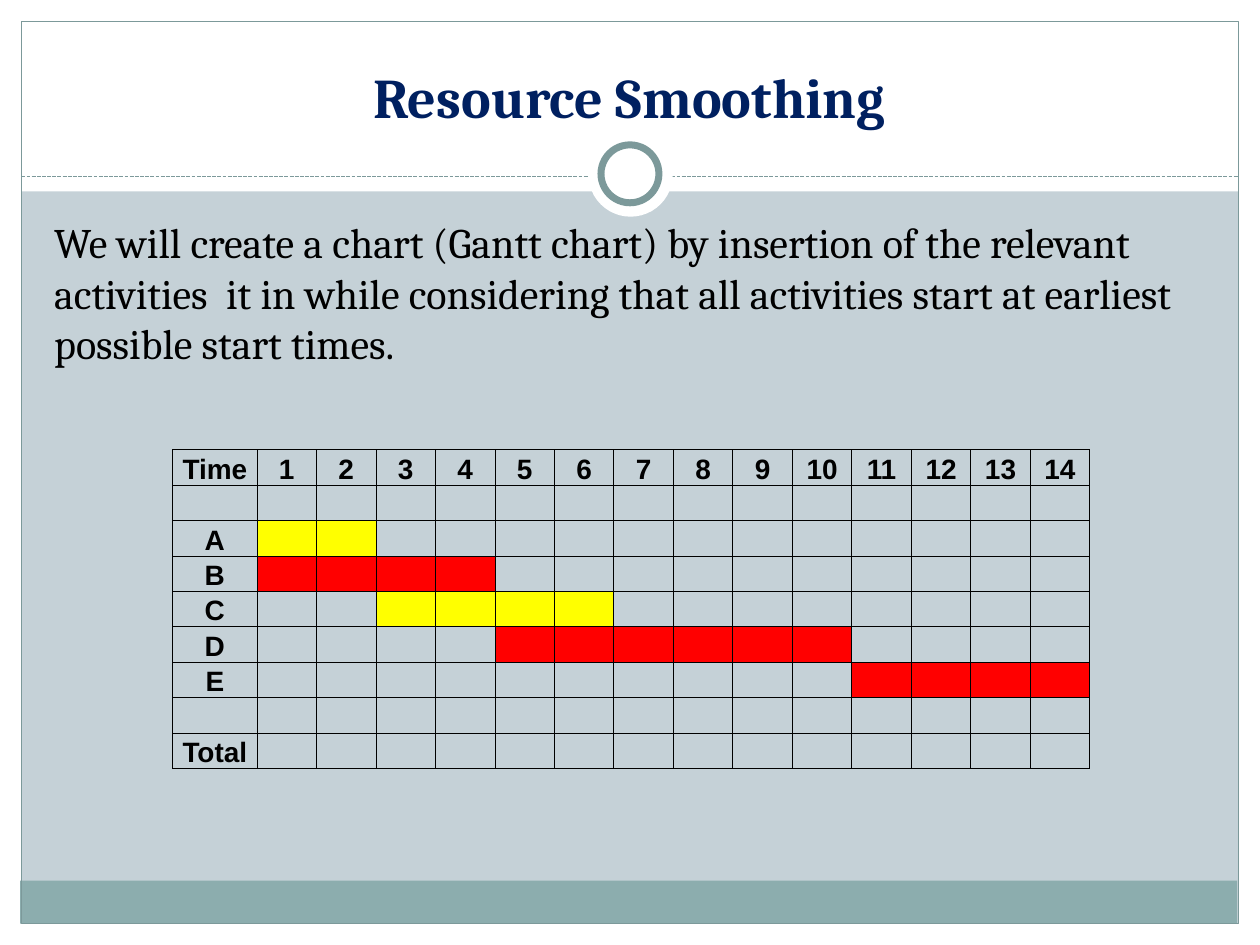
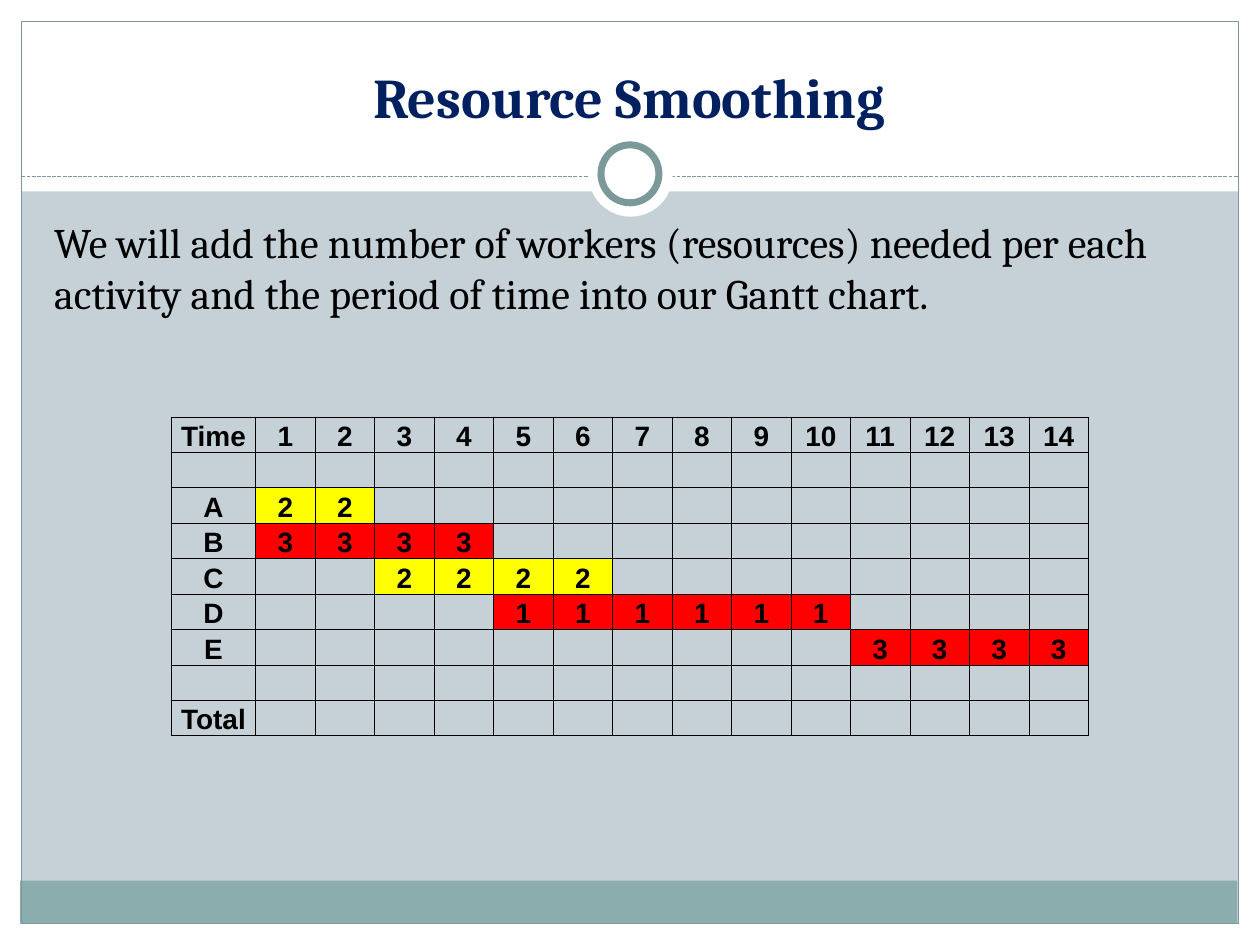
from dataclasses import dataclass

from lxml.etree import SubElement
from pptx import Presentation
from pptx.dml.color import RGBColor
from pptx.enum.dml import MSO_LINE_DASH_STYLE as Dash
from pptx.enum.shapes import MSO_CONNECTOR, MSO_SHAPE
from pptx.enum.text import MSO_ANCHOR, MSO_AUTO_SIZE, PP_ALIGN
from pptx.oxml.ns import qn
from pptx.util import Inches, Pt

WHITE, BLACK, NAVY = "FFFFFF", "000000", "002060"
BACKDROP, BAND, TRIM = "C5D1D7", "8CADAE", "7C999A"
YELLOW, RED = "FFFF00", "FF0000"
HEADING_FONT, TABLE_FONT = "Cambria", "Arial"
PERIODS = 14
TABLE_WIDTH, TABLE_HEIGHT = 7.28, 2.95
LABEL_WIDTH, EDGE_HEIGHT = 0.67, 0.21


@dataclass(frozen=True)
class Decoration:
    kind: MSO_SHAPE
    left: float
    top: float
    width: float
    height: float
    fill: str | None = WHITE
    line_width: float = 0


@dataclass(frozen=True)
class Activity:
    name: str
    start: int
    end: int
    workers: int
    color: str


@dataclass(frozen=True)
class GanttSlide:
    text: str
    table_left: float
    table_top: float
    show_workers: bool


FRAME = [
    Decoration(MSO_SHAPE.RECTANGLE, 0, 7.33, 10, 0.17),
    Decoration(MSO_SHAPE.RECTANGLE, 0, 0, 10, 1.52),
    Decoration(MSO_SHAPE.RECTANGLE, 0, 0, 0.17, 7.5),
    Decoration(MSO_SHAPE.RECTANGLE, 9.83, 0, 0.17, 7.5),
    Decoration(MSO_SHAPE.RECTANGLE, 0.16, 6.99, 9.66, 0.34, BAND),
    Decoration(MSO_SHAPE.RECTANGLE, 0.17, 0.17, 9.66, 7.16, None, 0.75),
]
RING = [
    Decoration(MSO_SHAPE.OVAL, 4.67, 1.05, 0.67, 0.67),
    Decoration(MSO_SHAPE.OVAL, 4.77, 1.15, 0.46, 0.46, WHITE, 4),
]
ACTIVITIES = [
    Activity("A", 1, 2, 2, YELLOW),
    Activity("B", 1, 4, 3, RED),
    Activity("C", 3, 6, 2, YELLOW),
    Activity("D", 5, 10, 1, RED),
    Activity("E", 11, 14, 3, RED),
]
SLIDES = [
    GanttSlide(
        "We will create a chart (Gantt chart) by insertion of the relevant activities  it in "
        "while considering that all activities start at earliest possible start times.",
        1.37, 3.36, False),
    GanttSlide(
        "We will add the number of workers (resources) needed per each activity and the "
        "period of time into our Gantt chart.",
        1.36, 3.1, True),
]


def paint(color_format, color: str) -> None:
    color_format.rgb = RGBColor.from_string(color)


def fill_solid(target, color: str) -> None:
    target.fill.solid()
    paint(target.fill.fore_color, color)


def place(shape, left: float, top: float, width: float, height: float) -> None:
    shape.left, shape.top = Inches(left), Inches(top)
    shape.width, shape.height = Inches(width), Inches(height)


def style_runs(para, font: str, size: int, color: str, bold: bool = False) -> None:
    for span in para.runs:
        span.font.name, span.font.size, span.font.bold = font, Pt(size), bold
        paint(span.font.color, color)


def draw_decoration(page, item: Decoration):
    shape = page.shapes.add_shape(item.kind, Inches(item.left), Inches(item.top),
                                  Inches(item.width), Inches(item.height))
    shape.shadow.inherit = False
    if item.fill:
        fill_solid(shape, item.fill)
    else:
        shape.fill.background()
    if item.line_width:
        paint(shape.line.color, TRIM)
        shape.line.width = Pt(item.line_width)
    else:
        shape.line.fill.background()
    return shape


def draw_divider(page):
    line = page.shapes.add_connector(MSO_CONNECTOR.STRAIGHT, Inches(0.17), Inches(1.4),
                                     Inches(9.83), Inches(1.4))
    paint(line.line.color, TRIM)
    line.line.width = Pt(0.75)
    line.line.dash_style = Dash.SQUARE_DOT
    SubElement(line.element.spPr, qn("a:effectLst"))
    return line


def decorate_layout(layout, page) -> None:
    """Draw the shared frame with the page's shape tools, then hand it to the layout."""
    fill_solid(layout.background, BACKDROP)
    shapes = [draw_decoration(page, item) for item in FRAME]
    shapes.append(draw_divider(page))
    shapes += [draw_decoration(page, item) for item in RING]
    for shape in shapes:
        layout.shapes.element.append(shape.element)


def write_title(page) -> None:
    title = page.shapes.title
    place(title, 0.33, 0.25, 9.33, 0.83)
    frame = title.text_frame
    frame.text = "Resource Smoothing"
    frame.auto_size = MSO_AUTO_SIZE.NONE
    frame.vertical_anchor = MSO_ANCHOR.BOTTOM
    frame.paragraphs[0].alignment = PP_ALIGN.CENTER
    style_runs(frame.paragraphs[0], HEADING_FONT, 32, NAVY, True)


def write_body(page, text: str) -> None:
    body = page.placeholders[1]
    place(body, 0.33, 1.67, 9.36, 2.32)
    frame = body.text_frame
    frame.text = text
    frame.auto_size = MSO_AUTO_SIZE.NONE
    para = frame.paragraphs[0]
    style_runs(para, HEADING_FONT, 24, BLACK)
    properties = para._p.get_or_add_pPr()
    properties.set("marL", "0")
    properties.set("indent", "0")
    SubElement(properties, qn("a:buNone"))


def set_borders(cell, visible: str) -> None:
    properties = cell._tc.get_or_add_tcPr()
    for side in "LRTB":
        line = SubElement(properties, qn(f"a:ln{side}"), w=str(Pt(0.5)))
        if side in visible:
            fill = SubElement(line, qn("a:solidFill"))
            SubElement(fill, qn("a:srgbClr"), val=BLACK)
        else:
            SubElement(line, qn("a:noFill"))


def write_cell(cell, text: str, color: str | None, borders: str) -> None:
    set_borders(cell, borders)
    if color:
        fill_solid(cell, color)
    else:
        cell.fill.background()
    cell.margin_left = cell.margin_right = cell.margin_top = Inches(0.01)
    cell.margin_bottom = 0
    cell.vertical_anchor = MSO_ANCHOR.BOTTOM
    para = cell.text_frame.paragraphs[0]
    para.alignment = PP_ALIGN.CENTER
    if text:
        para.text = text
        style_runs(para, TABLE_FONT, 16, BLACK, True)
    else:
        SubElement(para._p, qn("a:endParaRPr"), sz="800")


def gantt_rows(show_workers: bool) -> list[list[tuple[str, str | None]]]:
    """Return text and fill for every cell, with a blank edge row above and below."""
    periods = range(1, PERIODS + 1)
    blank = [("", None)] * (PERIODS + 1)
    rows = [blank, [("Time", None)] + [(str(period), None) for period in periods], blank]
    for activity in ACTIVITIES:
        busy = (str(activity.workers) if show_workers else "", activity.color)
        rows.append([(activity.name, None)] + [
            busy if activity.start <= period <= activity.end else ("", None)
            for period in periods])
    return rows + [blank, [("Total", None)] + blank[1:], blank]


def draw_gantt(page, content: GanttSlide) -> None:
    rows = gantt_rows(content.show_workers)
    last = len(rows) - 1
    table = page.shapes.add_table(
        len(rows), PERIODS + 1, Inches(content.table_left), Inches(content.table_top),
        Inches(TABLE_WIDTH), Inches(TABLE_HEIGHT)).table
    table.first_row = table.horz_banding = False
    for index, column in enumerate(table.columns):
        width = (TABLE_WIDTH - LABEL_WIDTH) / PERIODS if index else LABEL_WIDTH
        column.width = Inches(width)
    inner_height = (TABLE_HEIGHT - 2 * EDGE_HEIGHT) / (last - 1)
    edge_borders = {0: "B", last: "T"}
    for row_index, row in enumerate(rows):
        height = EDGE_HEIGHT if row_index in edge_borders else inner_height
        table.rows[row_index].height = Inches(height)
        for column_index, (text, color) in enumerate(row):
            write_cell(table.cell(row_index, column_index), text, color,
                       edge_borders.get(row_index, "LRTB"))


def main() -> None:
    deck = Presentation()
    deck.slide_width, deck.slide_height = Inches(10), Inches(7.5)
    layout = deck.slide_layouts[1]
    pages = [deck.slides.add_slide(layout) for _ in SLIDES]
    decorate_layout(layout, pages[0])
    for page, content in zip(pages, SLIDES):
        write_title(page)
        write_body(page, content.text)
        draw_gantt(page, content)
    deck.save("out.pptx")


if __name__ == "__main__":
    main()
